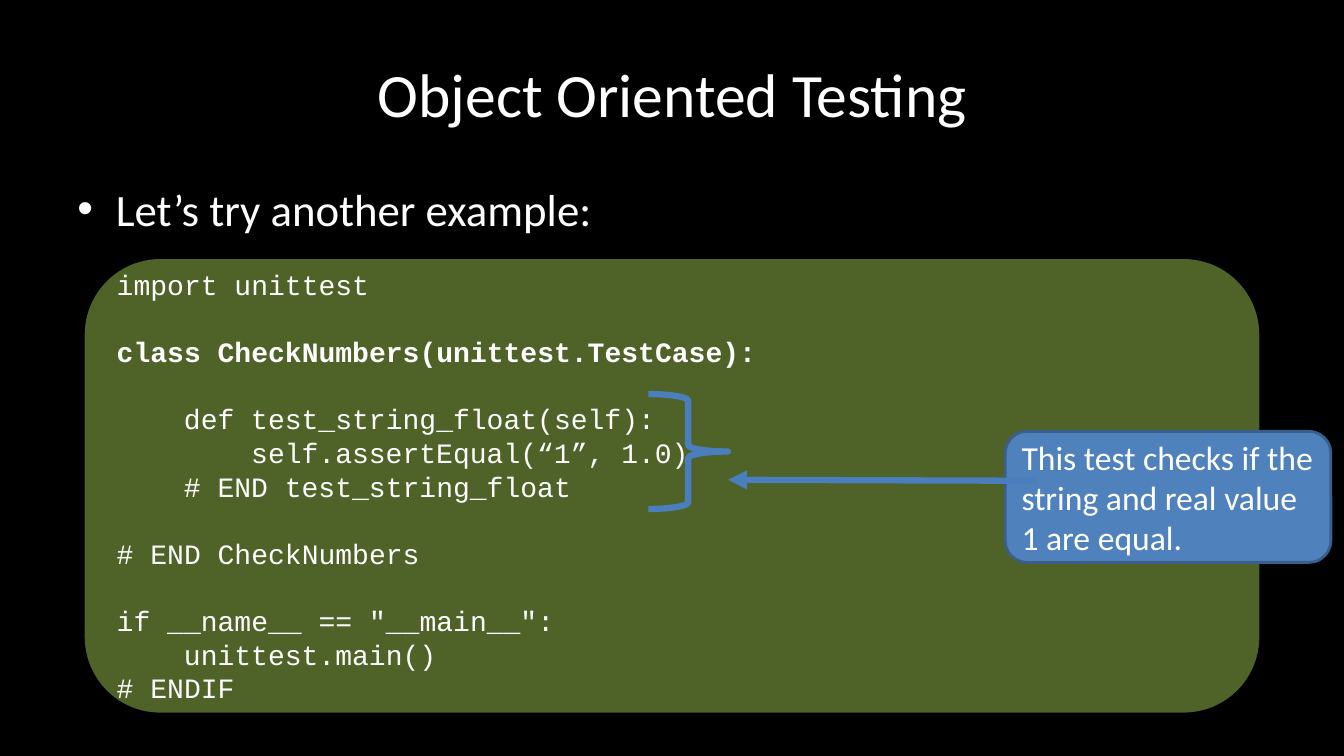
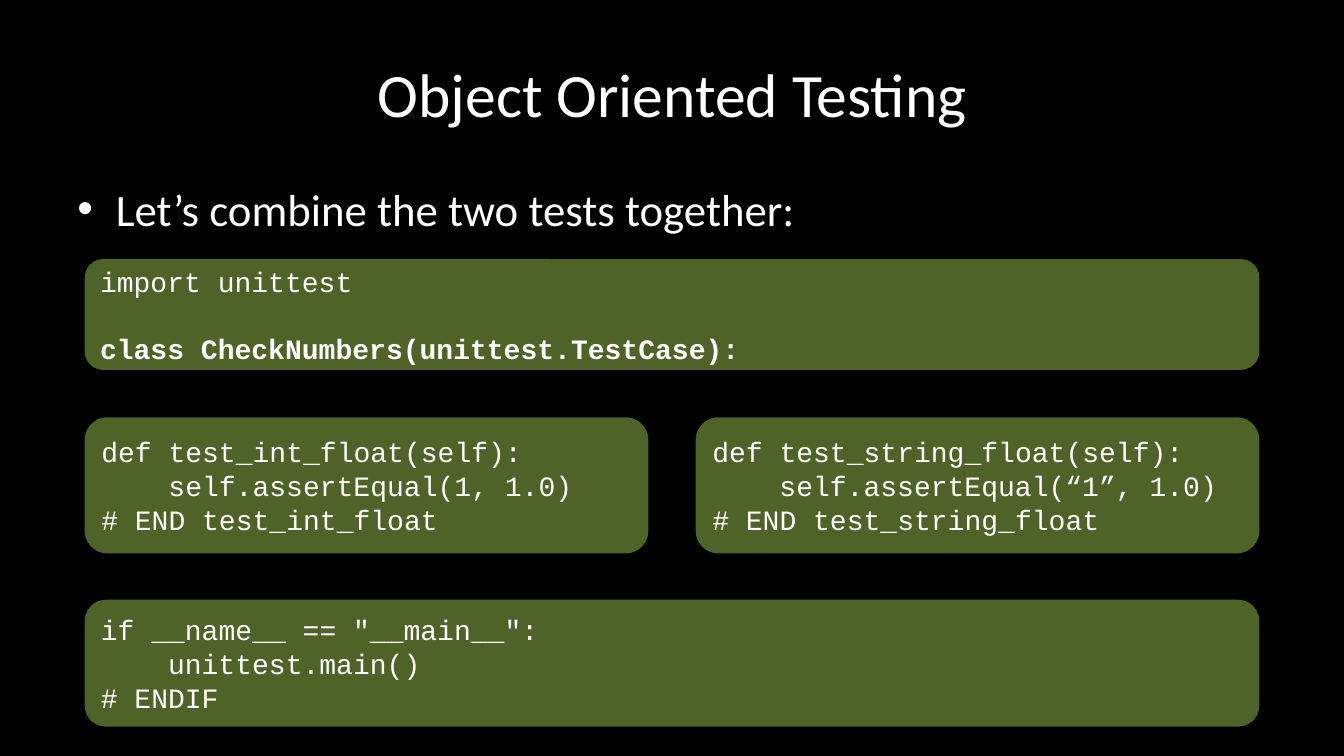
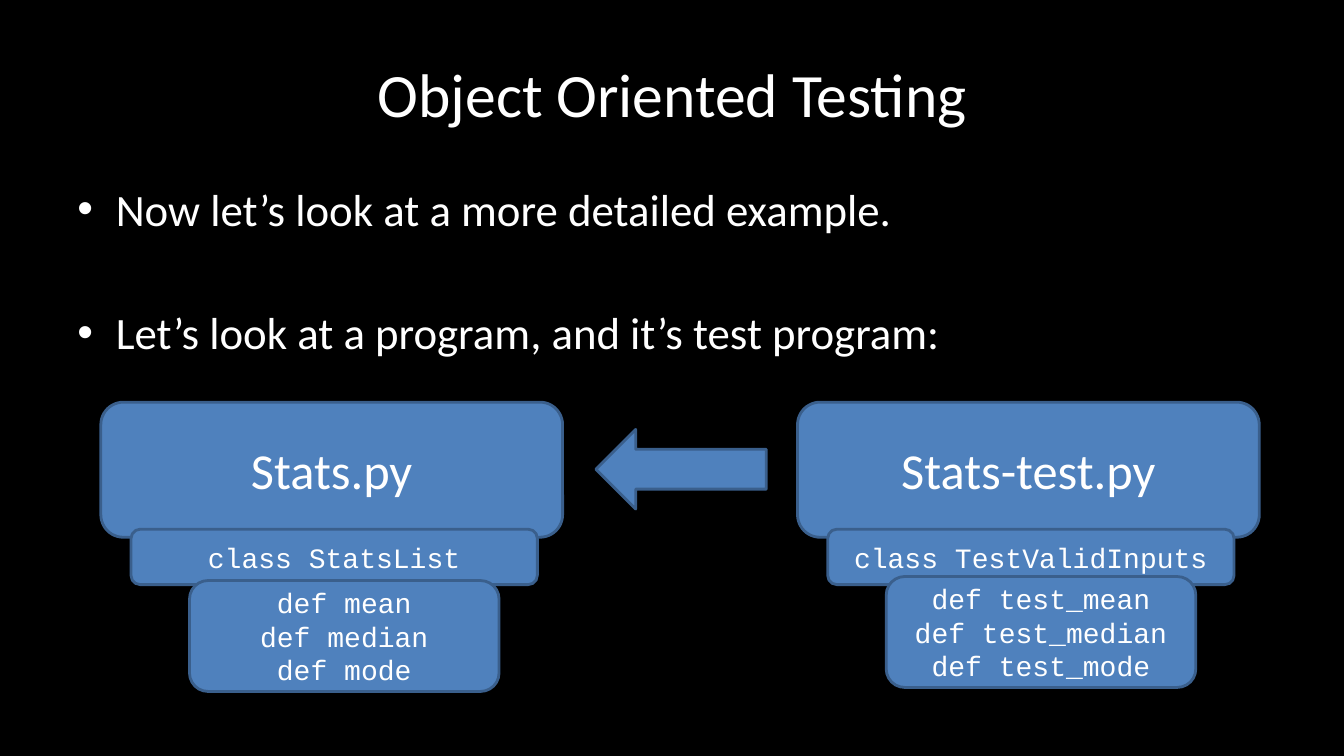
import pptx
import pptx.util
import pptx.dml.color
import pptx.enum.shapes
import pptx.enum.text
import pptx.oxml
import pptx.oxml.ns

# Lengths are in px, 100 to the inch.
PX = 9144
WIDTH, HEIGHT = 1333, 750
COLORS = {
    "back": "000000", "text": "FFFFFF", "code": "4F6228",
    "card": "4F81BD", "edge": "3A5F8C", "mark": "4B7EBC",
}
SANS, MONO = "Calibri", "Courier New"
SHAPE = pptx.enum.shapes.MSO_SHAPE
ALIGN = pptx.enum.text.PP_ALIGN
MIDDLE = pptx.enum.text.MSO_ANCHOR.MIDDLE
TOP = pptx.enum.text.MSO_ANCHOR.TOP

TITLE = "Object Oriented Testing"
TITLE_BOX = (67, 30, 1200, 125)
BODY_BOX = (67, 175, 1200, 495)
HANG = 38          # bullet indent
BULLET_GAP = 50    # points between bullets
TAB = 48           # points: four characters of code
CODE_GAP = 24      # points: one line of code

LEFT, SPAN, GUTTER = 84, 1165, 47
HALF = (SPAN - GUTTER) // 2

# Code is a list of blocks; each line is (indent level, text).
HEAD = [
    [(0, "import unittest")],
    [(0, "class CheckNumbers(unittest.TestCase):")],
]
MAIN = [[(0, 'if __name__ == "__main__":'), (1, "unittest.main()"), (0, "# ENDIF")]]


def test(name, value, level=0):
    return [[
        (level, f"def {name}(self):"),
        (level + 1, f"self.assertEqual({value}, 1.0)"),
        (level, f"# END {name}"),
    ]]


INT_TEST = test("test_int_float", "1")
STRING = ("test_string_float", "“1”")

SLIDES = [
    {
        "bullets": ["Let’s try another example:"],
        "code": [
            ((LEFT, 257, SPAN, 450),
             HEAD + test(*STRING, level=1) + [[(0, "# END CheckNumbers")]] + MAIN),
        ],
        "note": ((997, 428, 323, 130),
                 "This test checks if the string and real value 1 are equal."),
        "line": (1029, 477, 722, 476),
        "brace": (643, 391, 79, 114),
    },
    {
        "bullets": ["Let’s combine the two tests together:"],
        "code": [
            ((LEFT, 257, SPAN, 110), HEAD),
            ((LEFT, 595, SPAN, 126), MAIN),
            ((LEFT, 414, HALF, 135), INT_TEST),
            ((LEFT + HALF + GUTTER, 414, HALF, 135), test(*STRING)),
        ],
    },
    {
        "bullets": ["Now let’s look at a more detailed example.",
                    "Let’s look at a program, and it’s test program:"],
        "files": [
            {"left": 100, "low": 576, "file": "Stats.py", "class": "class StatsList",
             "defs": ["def mean", "def median", "def mode"]},
            {"left": 791, "low": 572, "file": "Stats-test.py",
             "class": "class TestValidInputs",
             "defs": ["def test_mean", "def test_median", "def test_mode"]},
        ],
        "arrow": (591, 426, 169, 79),
    },
]


def emu(*values):
    return [pptx.util.Emu(v * PX) for v in values]


def rgb(name):
    return pptx.dml.color.RGBColor.from_string(COLORS[name])


def node(parent, tag, **attrs):
    child = pptx.oxml.ns.qn(tag)
    item = parent.makeelement(child, attrs)
    parent.append(item)
    return item


def write(shape, lines, size=20, font=SANS, align=ALIGN.LEFT, anchor=MIDDLE, bullet=False):
    """Fill a shape; a line is a text or (text, {bold, gap, inset})."""
    frame = shape.text_frame
    frame.word_wrap = True
    frame.vertical_anchor = anchor
    for i, line in enumerate(lines):
        text, form = (line, {}) if isinstance(line, str) else line
        para = frame.paragraphs[0] if i == 0 else frame.add_paragraph()
        para.alignment = align
        para.space_before = pptx.util.Pt(form.get("gap", 0))
        props = para._p.get_or_add_pPr()
        if bullet:
            props.set("marL", str(HANG * PX))
            props.set("indent", str(-HANG * PX))
            node(props, "a:buFont", typeface="Arial")
            node(props, "a:buChar", char="•")
        elif form.get("inset"):
            props.set("marL", str(pptx.util.Pt(form["inset"])))
        run = para.add_run()
        run.text = text
        run.font.size = pptx.util.Pt(size)
        run.font.name = font
        run.font.bold = form.get("bold", False)
        run.font.color.rgb = rgb("text")


def draw(slide, kind, box, fill=None, edge=None, width=2):
    shape = slide.shapes.add_shape(kind, *emu(*box))
    shape.shadow.inherit = False
    if fill:
        shape.fill.solid()
        shape.fill.fore_color.rgb = rgb(fill)
    else:
        shape.fill.background()
    if edge:
        shape.line.color.rgb = rgb(edge)
        shape.line.width = pptx.util.Pt(width)
    else:
        shape.line.fill.background()
    return shape


def card(slide, box, lines, **form):
    write(draw(slide, SHAPE.ROUNDED_RECTANGLE, box, "card", "edge"), lines, **form)


def code(slide, box, blocks):
    lines = []
    for b, block in enumerate(blocks):
        for i, (level, text) in enumerate(block):
            lines.append((text, {
                "bold": text.startswith("class"),
                "gap": CODE_GAP if b and i == 0 else 0,
                "inset": level * TAB,
            }))
    write(draw(slide, SHAPE.ROUNDED_RECTANGLE, box, "code"), lines, font=MONO)


def link(slide, ends):
    line = slide.shapes.add_connector(pptx.enum.shapes.MSO_CONNECTOR.STRAIGHT, *emu(*ends))
    line.line.color.rgb = rgb("mark")
    line.line.width = pptx.util.Pt(4.5)
    node(line.line._get_or_add_ln(), "a:tailEnd", type="triangle")
    node(line._element.spPr, "a:effectLst")


def stack(slide, part):
    """Draw a file with its class and functions hanging below."""
    left = part["left"]
    mono = {"font": MONO, "align": ALIGN.CENTER}
    card(slide, (left, 399, 458, 134), [part["file"]], size=36, align=ALIGN.CENTER)
    card(slide, (left + 30, 525, 403, 55), [part["class"]], **mono)
    card(slide, (left + 88, part["low"], 307, 110), part["defs"], **mono)


def page(deck, data):
    slide = deck.slides.add_slide(deck.slide_layouts[5])
    title = slide.shapes.title
    title.left, title.top, title.width, title.height = emu(*TITLE_BOX)
    write(title, [TITLE], size=44, align=ALIGN.CENTER)
    body = slide.shapes.add_textbox(*emu(*BODY_BOX))
    lines = [(text, {"gap": BULLET_GAP if i else 6.4})
             for i, text in enumerate(data["bullets"])]
    write(body, lines, size=32, anchor=TOP, bullet=True)
    for box, blocks in data.get("code", []):
        code(slide, box, blocks)
    if "note" in data:
        box, text = data["note"]
        card(slide, box, [text], size=24)
        link(slide, data["line"])
        draw(slide, SHAPE.RIGHT_BRACE, data["brace"], edge="mark", width=4.5)
    for part in data.get("files", []):
        stack(slide, part)
    if "arrow" in data:
        draw(slide, SHAPE.LEFT_ARROW, data["arrow"], "card", "edge")


def main():
    deck = pptx.Presentation()
    deck.slide_width, deck.slide_height = emu(WIDTH, HEIGHT)
    back = deck.slide_master.background.fill
    back.solid()
    back.fore_color.rgb = rgb("back")
    for data in SLIDES:
        page(deck, data)
    deck.save("out.pptx")


if __name__ == "__main__":
    main()
